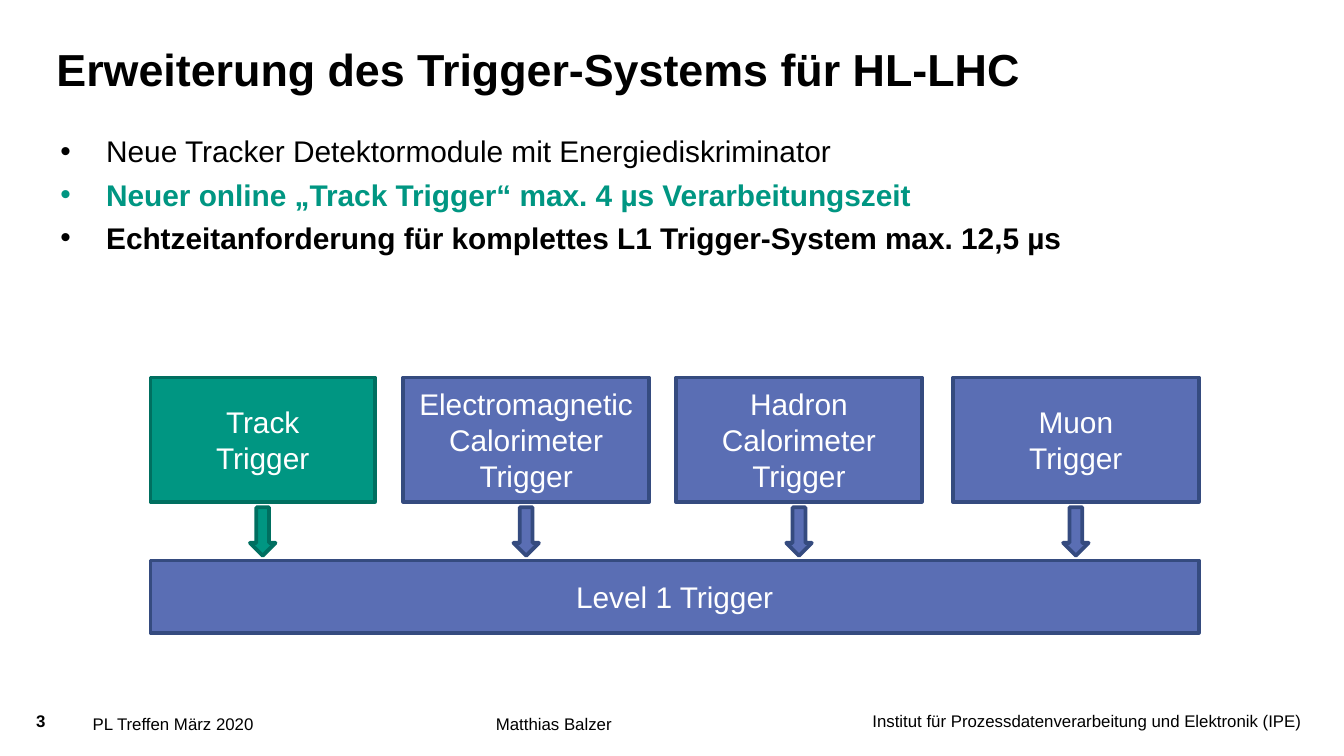
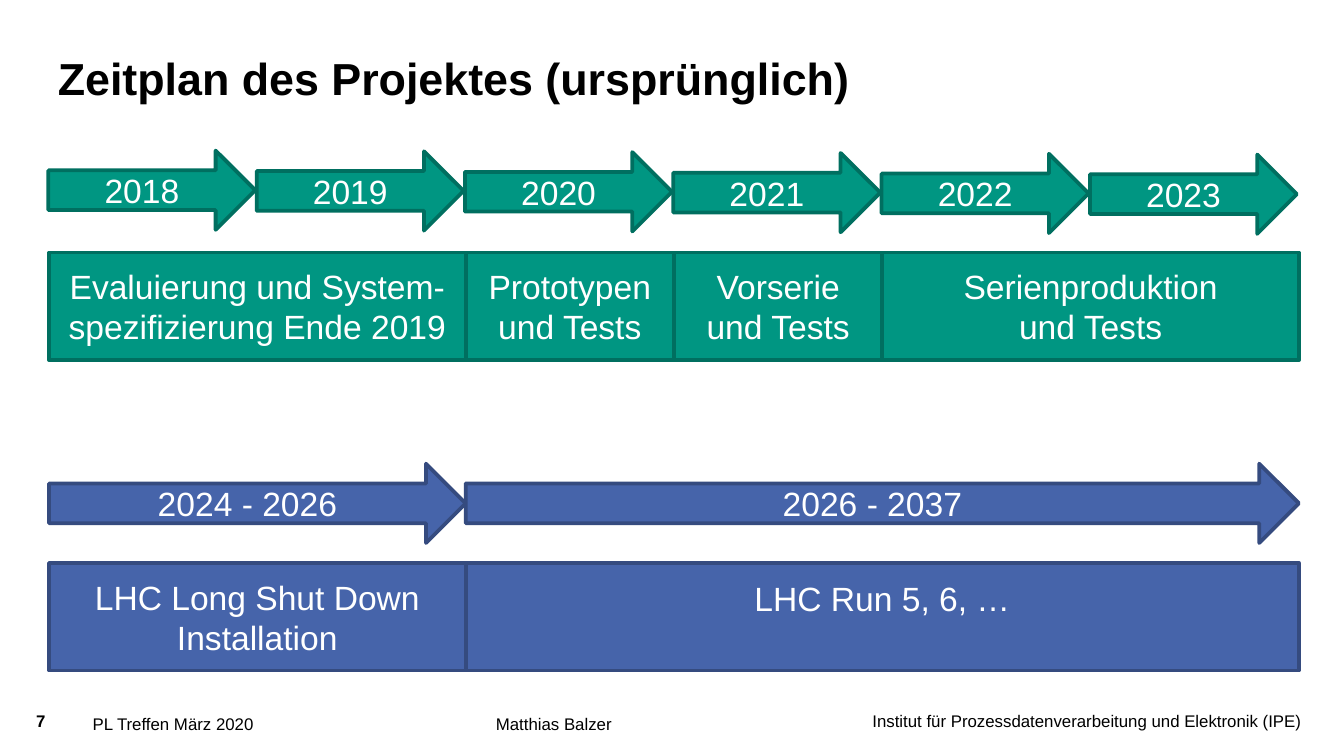
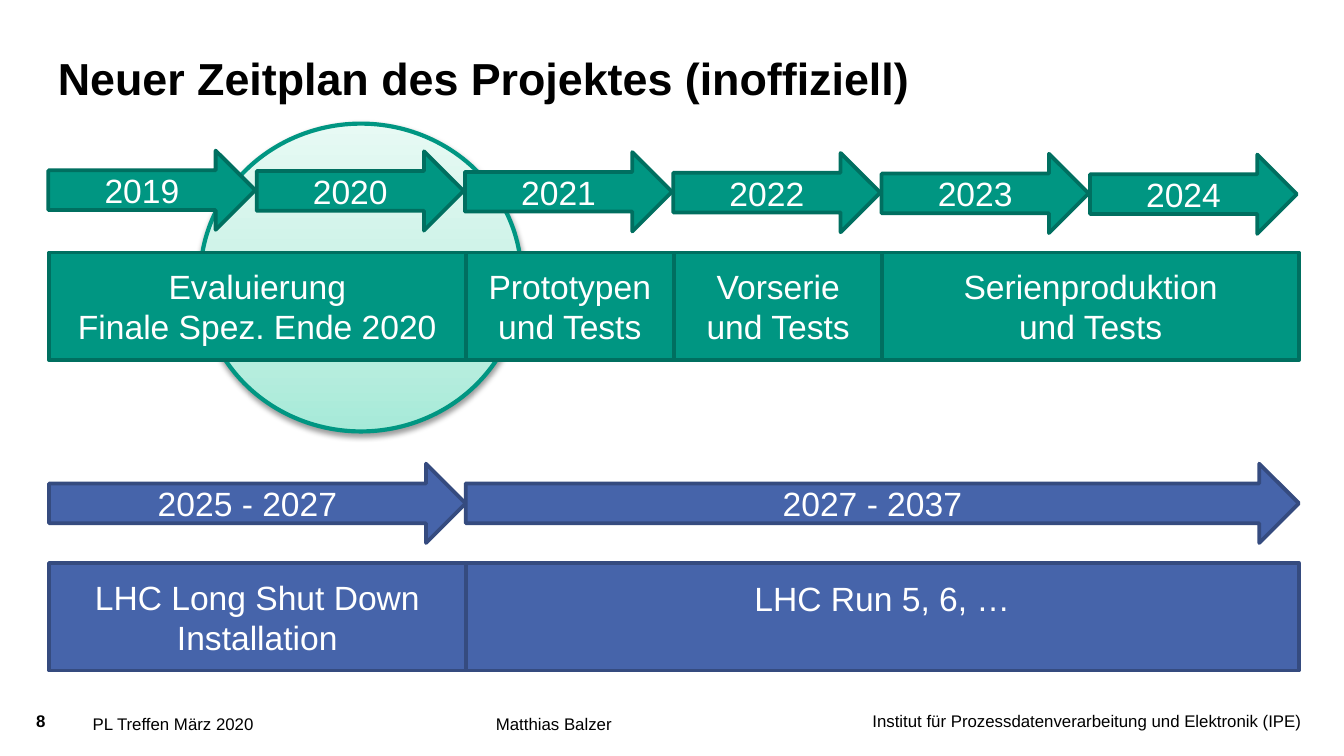
"""Build three slides on the track trigger project and its schedule."""
from lxml import etree
from pptx import Presentation
from pptx import util as u
from pptx.dml.color import RGBColor
from pptx.enum import shapes, text
from pptx.oxml.ns import qn

BLACK = RGBColor(0x00, 0x00, 0x00)
WHITE = RGBColor(0xFF, 0xFF, 0xFF)
GREEN = RGBColor(0x00, 0x96, 0x82)
DARK_GREEN = RGBColor(0x00, 0x6F, 0x60)
BLUE = RGBColor(0x46, 0x64, 0xAA)
LIGHT_BLUE = RGBColor(0x5A, 0x6E, 0xB4)
DARK_BLUE = RGBColor(0x35, 0x4B, 0x7F)
HIGHLIGHT_STOPS = [
    (0, RGBColor(0xA6, 0xEA, 0xD8)),
    (35, RGBColor(0xC2, 0xEF, 0xE2)),
    (100, RGBColor(0xE7, 0xFA, 0xF4)),
]

FONT = "Arial"
GRID_COLUMNS, GRID_ROWS = 100, 56.25
YEAR_LEFT, YEAR_STEP = 3.6, 15.5
TITLE_ONLY, TITLE_AND_BODY = 5, 1

RECTANGLE = shapes.MSO_SHAPE.RECTANGLE
RIGHT_ARROW = shapes.MSO_SHAPE.RIGHT_ARROW
DOWN_ARROW = shapes.MSO_SHAPE.DOWN_ARROW
LEFT, CENTER, RIGHT = text.PP_ALIGN.LEFT, text.PP_ALIGN.CENTER, text.PP_ALIGN.RIGHT


def write(paragraph, content, size=9, color=BLACK, bold=False, align=LEFT, before=0):
    paragraph.text = content
    paragraph.alignment = align
    if before:
        paragraph.space_before = u.Pt(before)
    for run in paragraph.runs:
        run.font.name = FONT
        run.font.size = u.Pt(size)
        run.font.bold = bold
        run.font.color.rgb = color


def add_element(parent, tag, **attributes):
    values = {name: str(value) for name, value in attributes.items()}
    return etree.SubElement(parent, qn(tag), values)


def add_color(parent, color):
    return add_element(parent, "a:srgbClr", val=color)


class Deck:
    """Holds the shared style and the current slide."""

    def __init__(self):
        self.presentation = Presentation()
        self.presentation.slide_width = u.Inches(10)
        self.presentation.slide_height = u.Inches(5.625)
        self.column = self.presentation.slide_width / GRID_COLUMNS
        self.row = self.presentation.slide_height / GRID_ROWS
        self.slide = None

    def area(self, left, top, width, height):
        return (round(left * self.column), round(top * self.row),
                round(width * self.column), round(height * self.row))

    def place(self, shape, area, anchor):
        shape.left, shape.top, shape.width, shape.height = self.area(*area)
        return self.plain_frame(shape, anchor)

    def plain_frame(self, shape, anchor=text.MSO_ANCHOR.TOP):
        frame = shape.text_frame
        frame.auto_size = text.MSO_AUTO_SIZE.NONE
        frame.word_wrap = True
        frame.vertical_anchor = anchor
        frame.margin_left = frame.margin_right = 0
        frame.margin_top = frame.margin_bottom = 0
        return frame

    def start_slide(self, number, title, title_area, layout=TITLE_ONLY):
        self.slide = self.presentation.slides.add_slide(
            self.presentation.slide_layouts[layout])
        frame = self.place(self.slide.shapes.title, title_area, text.MSO_ANCHOR.BOTTOM)
        write(frame.paragraphs[0], title, size=24, bold=True)
        self.footer(number)

    def label(self, content, area, **style):
        shape = self.slide.shapes.add_textbox(*self.area(*area))
        paragraph = self.plain_frame(shape).paragraphs[0]
        write(paragraph, content, **style)
        return paragraph

    def footer(self, number):
        self.label(str(number), (2.7, 52.9, 3.6, 1.8), bold=True)
        self.label("Institut für Prozessdatenverarbeitung und Elektronik (IPE)",
                   (64.6, 52.9, 32.2, 3), align=RIGHT)
        event = self.label("PL Treffen März 2020\tMatthias Balzer", (6.9, 53.1, 57, 2.5))
        tabs = add_element(event._p.get_or_add_pPr(), "a:tabLst")
        add_element(tabs, "a:tab", pos=round(30 * self.column), algn="l")

    def bullets(self, items, area):
        frame = self.place(self.slide.placeholders[1], area, text.MSO_ANCHOR.TOP)
        indent = round(3.4 * self.column)
        for index, (content, style) in enumerate(items):
            paragraph = frame.add_paragraph() if index else frame.paragraphs[0]
            properties = paragraph._p.get_or_add_pPr()
            properties.set("marL", str(indent))
            properties.set("indent", str(-indent))
            add_element(properties, "a:buChar", char="•")
            write(paragraph, content, size=16, before=4 if index else 0, **style)

    def block(self, kind, area, fill, line, paragraphs=(), size=18):
        shape = self.slide.shapes.add_shape(kind, *self.area(*area))
        shape.shadow.inherit = False
        shape.fill.solid()
        shape.fill.fore_color.rgb = fill
        shape.line.color.rgb = line
        shape.line.width = u.Pt(2)
        frame = shape.text_frame
        frame.word_wrap = True
        frame.vertical_anchor = text.MSO_ANCHOR.MIDDLE
        for index, content in enumerate(paragraphs):
            paragraph = frame.add_paragraph() if index else frame.paragraphs[0]
            write(paragraph, content, size=size, color=WHITE, align=CENTER)
        return shape

    def highlight(self, area):
        shape = self.slide.shapes.add_shape(shapes.MSO_SHAPE.OVAL, *self.area(*area))
        shape.line.color.rgb = GREEN
        shape.line.width = u.Pt(2.25)
        shape.fill.gradient()
        shape.fill.gradient_angle = 90
        properties = shape._element.spPr
        stops = properties.find(qn("a:gradFill")).find(qn("a:gsLst"))
        stops.clear()
        for percent, color in HIGHLIGHT_STOPS:
            add_color(add_element(stops, "a:gs", pos=percent * 1000), color)
        shape.shadow.inherit = False
        shadow = add_element(properties.find(qn("a:effectLst")), "a:outerShdw",
                             blurRad=u.Pt(3.1), dist=u.Pt(1.6), dir=90 * 60000,
                             rotWithShape=0)
        add_element(add_color(shadow, BLACK), "a:alpha", val=38000)

    def schedule(self, first_year, evaluation, shutdown, operation):
        for index in range(6):
            area = (YEAR_LEFT + index * YEAR_STEP, 11.2 + index * 0.06, 15.4, 5.9)
            self.block(RIGHT_ARROW, area, GREEN, DARK_GREEN, [str(first_year + index)])
        phases = [(0, 2, evaluation), (2, 1, "Prototypen\nund Tests"),
                  (3, 1, "Vorserie\nund Tests"), (4, 2, "Serienproduktion\nund Tests")]
        for start, years, content in phases:
            self.block(RECTANGLE, self.span(start, years, 18.8, 8), GREEN, DARK_GREEN,
                       [content])
        for start, years, content in [(0, 2, shutdown), (2, 4, operation)]:
            self.block(RIGHT_ARROW, self.span(start, years, 34.5, 5.9), BLUE, DARK_BLUE,
                       [content])
        self.block(RECTANGLE, self.span(0, 2, 41.9, 8), BLUE, DARK_BLUE,
                   ["LHC Long Shut Down Installation"])
        run = self.block(RECTANGLE, self.span(2, 4, 41.9, 8), BLUE, DARK_BLUE,
                         ["LHC Run 5, 6, …"])
        run.text_frame.vertical_anchor = text.MSO_ANCHOR.TOP
        run.text_frame.margin_top = round(1.1 * self.row)

    def span(self, start, years, top, height):
        return YEAR_LEFT + 0.05 + start * YEAR_STEP, top, years * YEAR_STEP, height


def trigger_slide(deck):
    deck.start_slide(3, "Erweiterung des Trigger-Systems für HL-LHC",
                     (4.2, 1.6, 85.9, 5.5), TITLE_AND_BODY)
    deck.bullets([
        ("Neue Tracker Detektormodule mit Energiediskriminator", {}),
        ("Neuer online „Track Trigger“ max. 4 µs Verarbeitungszeit",
         {"color": GREEN, "bold": True}),
        ("Echtzeitanforderung für komplettes L1 Trigger-System max. 12,5 µs",
         {"bold": True}),
    ], (4.5, 9.9, 80.4, 14.4))
    sources = [
        (11.2, 16.7, GREEN, DARK_GREEN, ["Track\nTrigger"]),
        (30, 18.3, LIGHT_BLUE, DARK_BLUE, ["Electromagnetic Calorimeter", "Trigger"]),
        (50.3, 18.3, LIGHT_BLUE, DARK_BLUE, ["Hadron Calorimeter", "Trigger"]),
        (70.9, 18.3, LIGHT_BLUE, DARK_BLUE, ["Muon\nTrigger"]),
    ]
    for left, width, fill, line, paragraphs in sources:
        deck.block(RECTANGLE, (left, 28.1, width, 9.25), fill, line, paragraphs, size=16)
        deck.block(DOWN_ARROW, (left + width / 2 - 0.95, 37.75, 1.9, 3.6), fill, line)
    deck.block(RECTANGLE, (11.2, 41.7, 78, 5.4), LIGHT_BLUE, DARK_BLUE,
               ["Level 1 Trigger"], size=16)


def main():
    deck = Deck()
    trigger_slide(deck)
    schedule_title = (4.3, 3.2, 75.6, 4.6)
    deck.start_slide(7, "Zeitplan des Projektes (ursprünglich)", schedule_title)
    deck.schedule(2018, "Evaluierung und System-spezifizierung Ende 2019",
                  "2024 - 2026", "2026 - 2037")
    deck.start_slide(8, "Neuer Zeitplan des Projektes (inoffiziell)", schedule_title)
    deck.highlight((14.9, 9.2, 23.9, 22.9))
    deck.schedule(2019, "Evaluierung\nFinale Spez. Ende 2020",
                  "2025 - 2027", "2027 - 2037")
    deck.presentation.save("out.pptx")


if __name__ == "__main__":
    main()
